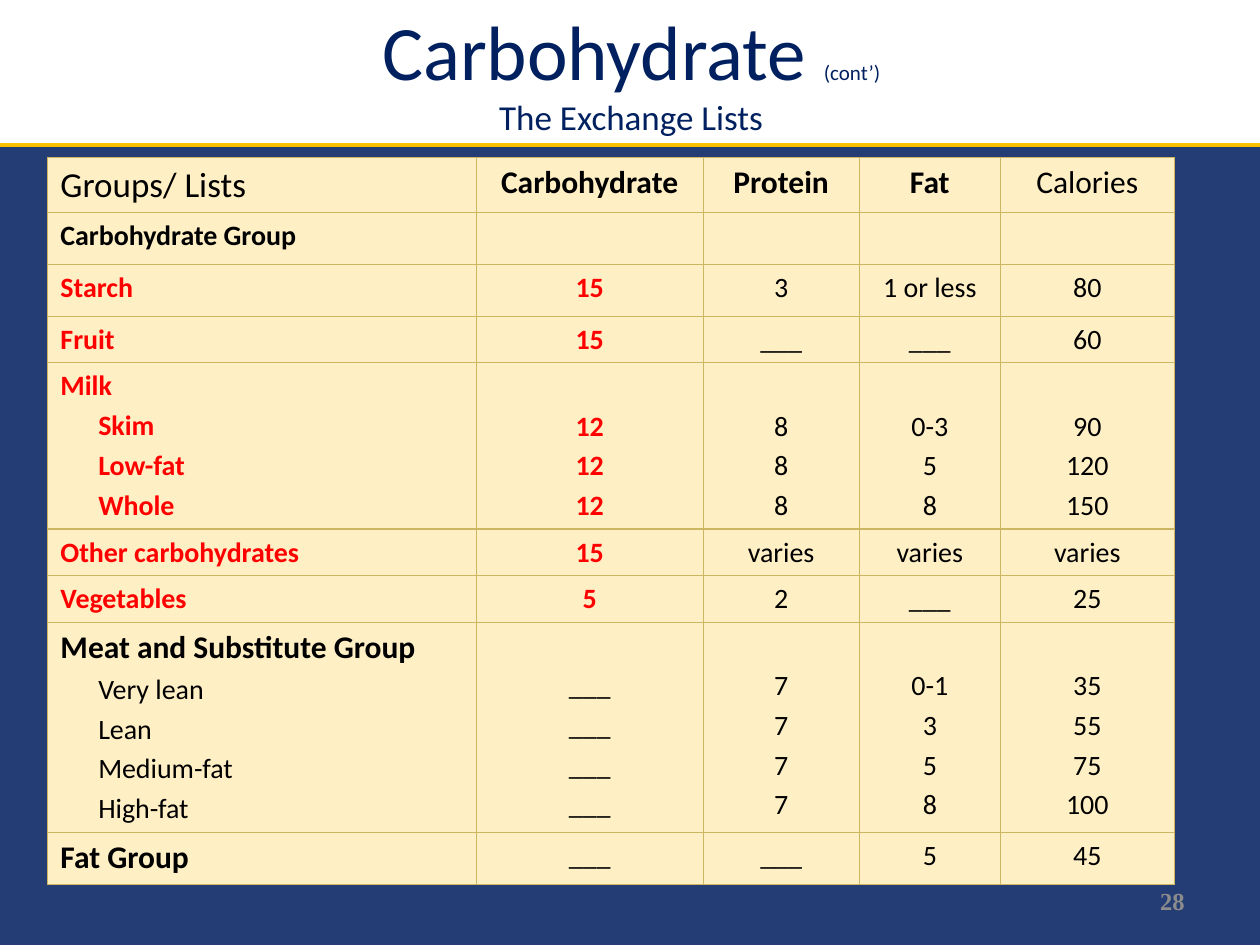
"""Build the carbohydrate exchange lists slide."""
import pptx
import pptx.dml.color
import pptx.enum.shapes
import pptx.enum.text
import pptx.oxml
import pptx.oxml.ns
import pptx.util
from pptx.util import Inches

Pt = pptx.util.Pt
ALIGN = pptx.enum.text.PP_ALIGN
MIDDLE = pptx.enum.text.MSO_ANCHOR.MIDDLE

COLORS = {
    "background": "253D75", "white": "FFFFFF", "gold": "FFC000",
    "title": "002060", "number": "8C8C8C", "cell": "FFEFC5",
    "border": "CCB661", "black": "000000", "red": "FF0000",
}
COLUMN_WIDTHS = [3.4, 1.8, 1.24, 1.12, 1.38]
HEADER = {"label": (20, False, "black"), "item": (18, True, "black"), "value": (18, True, "black")}
RED = {"label": (16, True, "red"), "item": (16, True, "red"), "carb": (16, True, "red")}
GROUP = {"label": (18, True, "black")}
PLAIN = (16, False, "black")
DASH = "___"

ROWS = [
    (0.44, HEADER, [["Groups/ Lists"], ["Carbohydrate"], ["Protein"], ["Fat"], ["Calories"]]),
    (0.41, {"label": (16, True, "black")}, [["Carbohydrate Group"], [], [], [], []]),
    (0.41, RED, [["Starch"], ["15"], ["3"], ["1 or less"], ["80"]]),
    (0.37, RED, [["Fruit"], ["15"], [DASH], [DASH], ["60"]]),
    (1.32, RED, [["Milk", "Skim", "Low-fat", "Whole"], ["12"] * 3, ["8"] * 3,
                 ["0-3", "5", "8"], ["90", "120", "150"]]),
    (0.37, RED, [["Other carbohydrates"], ["15"], ["varies"], ["varies"], ["varies"]]),
    (0.37, RED, [["Vegetables"], ["5"], ["2"], [DASH], ["25"]]),
    (1.67, GROUP, [["Meat and Substitute Group", "Very lean", "Lean", "Medium-fat", "High-fat"],
                   [DASH] * 4, ["7"] * 4, ["0-1", "3", "5", "8"], ["35", "55", "75", "100"]]),
    (0.41, GROUP, [["Fat Group"], [DASH], [DASH], ["5"], ["45"]]),
]


def rgb(name):
    return pptx.dml.color.RGBColor.from_string(COLORS[name])


def add_run(p, text, size, bold, color, font="Calibri"):
    r = p.add_run()
    r.text = text
    for key, value in {"name": font, "size": Pt(size), "bold": bold}.items():
        setattr(r.font, key, value)
    r.font.color.rgb = rgb(color)


def add_title(s):
    sp = s.shapes.add_shape(pptx.enum.shapes.MSO_SHAPE.RECTANGLE,
                            Inches(-0.04), Inches(-0.03), Inches(10.1), Inches(1.18))
    sp.shadow.inherit = False
    sp.fill.solid()
    sp.fill.fore_color.rgb = rgb("white")
    sp.line.color.rgb = rgb("gold")
    sp.line.width = Pt(2)
    tf = sp.text_frame
    tf.vertical_anchor = MIDDLE
    p = tf.paragraphs[0]
    add_run(p, "Carbohydrate ", 44, False, "title")
    add_run(p, "(cont’)", 12, False, "title")
    subtitle = tf.add_paragraph()
    add_run(subtitle, "The Exchange Lists", 20, False, "title")
    for p in tf.paragraphs:
        p.alignment = ALIGN.CENTER


def add_slide_number(s):
    sp = s.shapes.add_textbox(Inches(7.17), Inches(6.95), Inches(2.33), Inches(0.4))
    tf = sp.text_frame
    tf.word_wrap = True
    tf.vertical_anchor = MIDDLE
    p = tf.paragraphs[0]
    p.alignment = ALIGN.RIGHT
    add_run(p, "28", 14, True, "number", "Times New Roman")


def style_cell(cell):
    tc_pr = cell._tc.get_or_add_tcPr()
    for side in ("lnL", "lnR", "lnT", "lnB"):
        tc_pr.append(pptx.oxml.parse_xml(
            f'<a:{side} {pptx.oxml.ns.nsdecls("a")} w="{Pt(0.75)}"><a:solidFill>'
            f'<a:srgbClr val="{COLORS["border"]}"/></a:solidFill></a:{side}>'))
    cell.fill.solid()
    cell.fill.fore_color.rgb = rgb("cell")


def text_format(styles, column, line, header):
    if column == 0:
        return styles.get("label" if line == 0 else "item", PLAIN)
    if header:
        size, bold, color = styles["value"]
        return size, bold and column < 4, color
    return styles.get("carb", PLAIN) if column == 1 else PLAIN


def fill_cell(cell, lines, styles, column):
    tf = cell.text_frame
    for i, text in enumerate(lines):
        p = tf.paragraphs[0] if i == 0 else tf.add_paragraph()
        p.alignment = ALIGN.CENTER if column else ALIGN.LEFT
        if i:
            p.space_before = Pt(3.2)
            if column == 0:
                p._p.get_or_add_pPr().set("marL", str(Inches(0.3)))
        add_run(p, text, *text_format(styles, column, i, styles is HEADER))


def add_exchange_table(s):
    table = s.shapes.add_table(len(ROWS), len(COLUMN_WIDTHS), Inches(0.38), Inches(1.25),
                               Inches(sum(COLUMN_WIDTHS)),
                               Inches(sum(row[0] for row in ROWS))).table
    for key in ("first_row", "horz_banding"):
        setattr(table, key, False)
    for column, width in zip(table.columns, COLUMN_WIDTHS):
        column.width = Inches(width)
    for i, (height, styles, texts) in enumerate(ROWS):
        table.rows[i].height = Inches(height)
        for j, lines in enumerate(texts):
            cell = table.cell(i, j)
            style_cell(cell)
            if j and len(lines) > 1:
                cell.margin_top = Inches(0.37)
            fill_cell(cell, lines, styles, j)


def main():
    prs = pptx.Presentation()
    prs.slide_width, prs.slide_height = Inches(10), Inches(7.5)
    s = prs.slides.add_slide(prs.slide_layouts[6])
    s.background.fill.solid()
    s.background.fill.fore_color.rgb = rgb("background")
    add_title(s)
    add_slide_number(s)
    add_exchange_table(s)
    prs.save("out.pptx")


if __name__ == "__main__":
    main()
